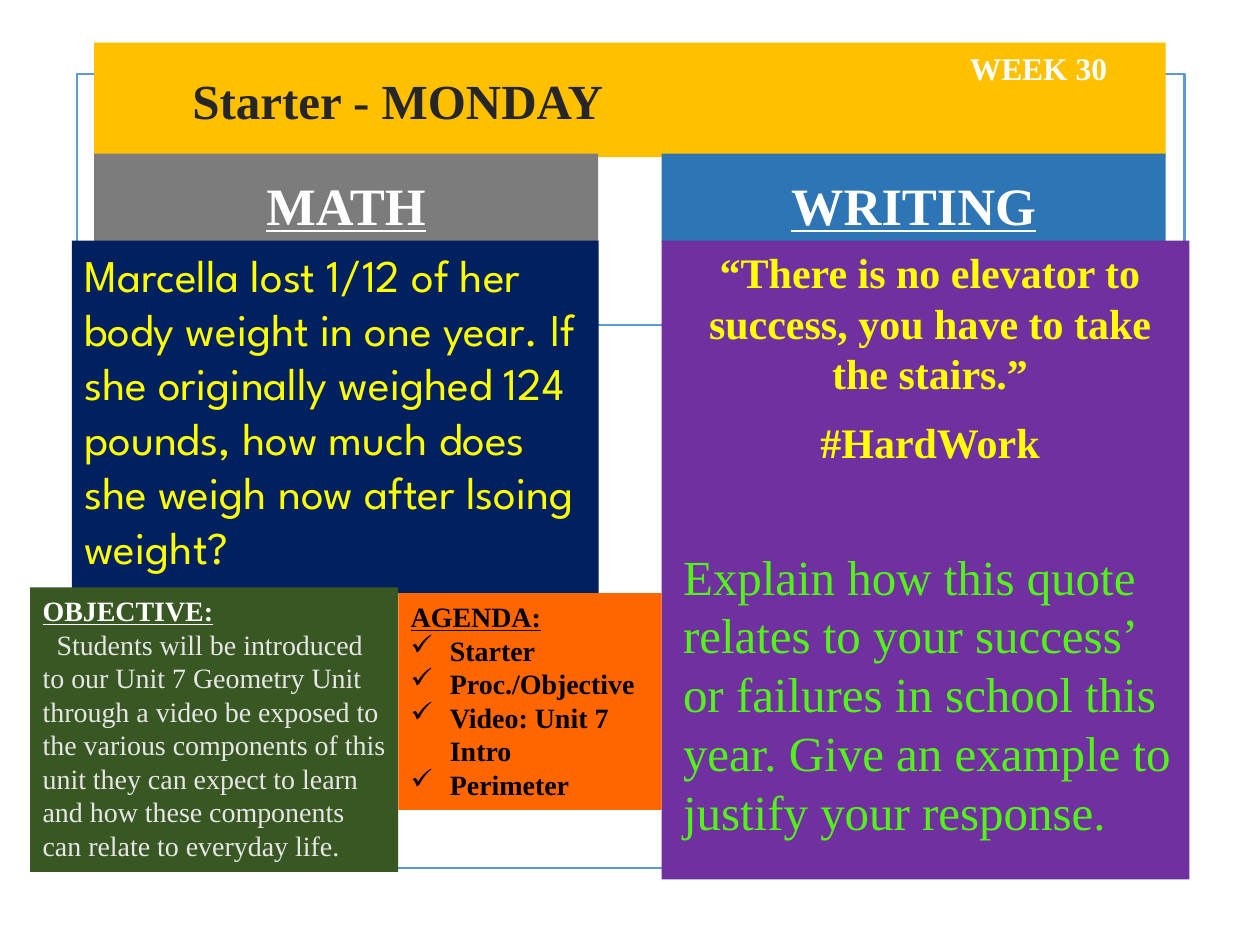
import pptx
import pptx.dml.color
import pptx.enum.shapes
import pptx.enum.text
import pptx.oxml.ns
import pptx.util
from lxml import etree

Cm = pptx.util.Cm
Pt = pptx.util.Pt
ALIGN = pptx.enum.text.PP_ALIGN
ANCHOR = pptx.enum.text.MSO_ANCHOR
SERIF = "Times New Roman"
HEADING = dict(name=SERIF, size=Pt(30), bold=True, underline=True, color="FFFFFF")
SMALL = dict(name=SERIF, size=Pt(16), bold=True)


def rgb(value):
    """Return the colour for a hex string."""
    return pptx.dml.color.RGBColor.from_string(value)


def set_values(target, values):
    """Set attributes of an object from a dict."""
    for name, value in values.items():
        setattr(target, name, value)


def add_box(slide, box, fill=None, line=None):
    """Add a flat rectangle with an optional fill and outline."""
    shape = slide.shapes.add_shape(
        pptx.enum.shapes.MSO_SHAPE.RECTANGLE, *map(Cm, box))
    shape.shadow.inherit = False
    if fill:
        shape.fill.solid()
        shape.fill.fore_color.rgb = rgb(fill)
    else:
        shape.fill.background()
    if line:
        shape.line.color.rgb = rgb(line)
        shape.line.width = Pt(1.25)
    else:
        shape.line.fill.background()
    return shape


def set_indent(paragraph, left, first=0, bullet=None):
    """Set the paragraph indents in centimetres and an optional bullet."""
    properties = paragraph._p.get_or_add_pPr()
    properties.set("marL", str(Cm(left)))
    properties.set("indent", str(Cm(first)))
    if bullet:
        element = etree.SubElement(properties, pptx.oxml.ns.qn("a:buChar"))
        element.set("char", bullet)


def write(shape, paragraphs, anchor=ANCHOR.TOP):
    """Fill a shape with (text, font, layout, indent) paragraphs."""
    frame = shape.text_frame
    set_values(frame, dict(word_wrap=True, vertical_anchor=anchor))
    for index, (text, font, layout, indent) in enumerate(paragraphs):
        paragraph = frame.add_paragraph() if index else frame.paragraphs[0]
        set_indent(paragraph, **indent)
        set_values(paragraph, {"alignment": ALIGN.LEFT, **layout})
        run = paragraph.add_run()
        run.text = text
        values = dict(font)
        run.font.color.rgb = rgb(values.pop("color"))
        set_values(run.font, values)


def add_backdrop(slide, box):
    """Draw the outline frame and its divider line."""
    left, top, width, height = box
    add_box(slide, box, line="5B9BD5")
    divider = slide.shapes.add_connector(
        pptx.enum.shapes.MSO_CONNECTOR.STRAIGHT,
        Cm(left + 2), Cm(top + 5.05), Cm(left + width - 2), Cm(top + 5.05))
    divider.line.color.rgb = rgb("5B9BD5")
    divider.line.width = Pt(1.25)
    etree.SubElement(divider._element.spPr, pptx.oxml.ns.qn("a:effectLst"))


def add_title(slide, box, text):
    """Draw the title band."""
    shape = add_box(slide, box, "FFC000")
    shape.text_frame.margin_left = Cm(1.98)
    font = dict(name=SERIF, size=Pt(28), bold=True, color="262626")
    write(shape, [(text, font, {}, {"left": 0})], ANCHOR.MIDDLE)


def add_week(slide, box, text):
    """Write the week label."""
    shape = slide.shapes.add_textbox(*map(Cm, box))
    font = dict(name=SERIF, size=Pt(18), bold=True, color="FFFFFF")
    write(shape, [(text, font, {}, {"left": 0})])


def add_subject(slide, box, heading, fills, paragraphs, heading_shift=0):
    """Draw a subject heading above its task panel."""
    left, top, width, height = box
    header = add_box(slide, (left + heading_shift, top, 10.16, 1.78), fills[0])
    write(header, [(heading, HEADING, {"alignment": ALIGN.CENTER}, {"left": 0})],
          ANCHOR.BOTTOM)
    panel = add_box(slide, (left, top + 1.75, width, height - 1.75), fills[1])
    write(panel, paragraphs)


def add_note(slide, box, fill, heading, heading_color, items, item_font, indent):
    """Draw a small panel with an underlined heading."""
    heading_font = {**SMALL, "underline": True, "color": heading_color}
    write(add_box(slide, box, fill),
          [(heading, heading_font, {}, {"left": 0})]
          + [(item, {**SMALL, **item_font}, {}, indent) for item in items])


def main():
    """Build the starter slide."""
    presentation = pptx.Presentation()
    set_values(presentation, dict(slide_width=Cm(25.4), slide_height=Cm(19.05)))
    slide = presentation.slides.add_slide(presentation.slide_layouts[6])

    add_backdrop(slide, (1.55, 1.5, 22.33, 16))
    add_title(slide, (1.9, 0.86, 21.6, 2.31), "Starter - MONDAY")

    problem = ("Marcella lost 1/12 of her body weight in one year. If she originally "
               "weighed 124 pounds, how much does she weigh now after lsoing weight?")
    problem_font = dict(name="League Spartan", size=Pt(25.9), color="FFFF00")
    add_subject(slide, (1.45, 3.1, 10.62, 8.86), "MATH", ("7C7C7C", "002060"),
                [(problem, problem_font, {}, {"left": 0})], 0.45)

    quote_font = dict(name=SERIF, size=Pt(24), bold=True, color="FFFF00")
    prompt_font = dict(name=SERIF, size=Pt(28), color="52F418")
    centred = dict(alignment=ALIGN.CENTER, space_after=Pt(6))
    inset = {"left": 0.18}
    add_subject(slide, (13.34, 3.1, 10.64, 14.63), "WRITING", ("2E75B6", "7030A0"), [
        ("“There is no elevator to success, you have to take the stairs.”",
         quote_font, centred, inset),
        ("#HardWork", quote_font, {**centred, "space_before": Pt(4.8)}, inset),
        ("Explain how this quote relates to your success’ or failures in school "
         "this year. Give an example to justify your response.",
         prompt_font, {"space_before": Pt(39)}, inset),
    ])

    add_week(slide, (19.3, 0.86, 3.53, 1.02), "WEEK 30")
    objective = ("Students will be introduced to our Unit 7 Geometry Unit through a "
                 "video be exposed to the various components of this unit they can "
                 "expect to learn and how these components can relate to everyday life.")
    add_note(slide, (0.61, 11.84, 7.42, 5.74), "385723", "OBJECTIVE:", "FFFFFF",
             [objective], dict(bold=False, color="E7E6E6"),
             {"left": 0, "first": 0.28})
    add_note(slide, (8.03, 11.96, 5.31, 4.37), "FF6600", "AGENDA:", "000000",
             ["Starter", "Proc./Objective", "Video: Unit 7 Intro", "Perimeter"],
             dict(color="000000"), {"left": 0.79, "first": -0.79, "bullet": "✓"})

    presentation.save("out.pptx")


if __name__ == "__main__":
    main()
